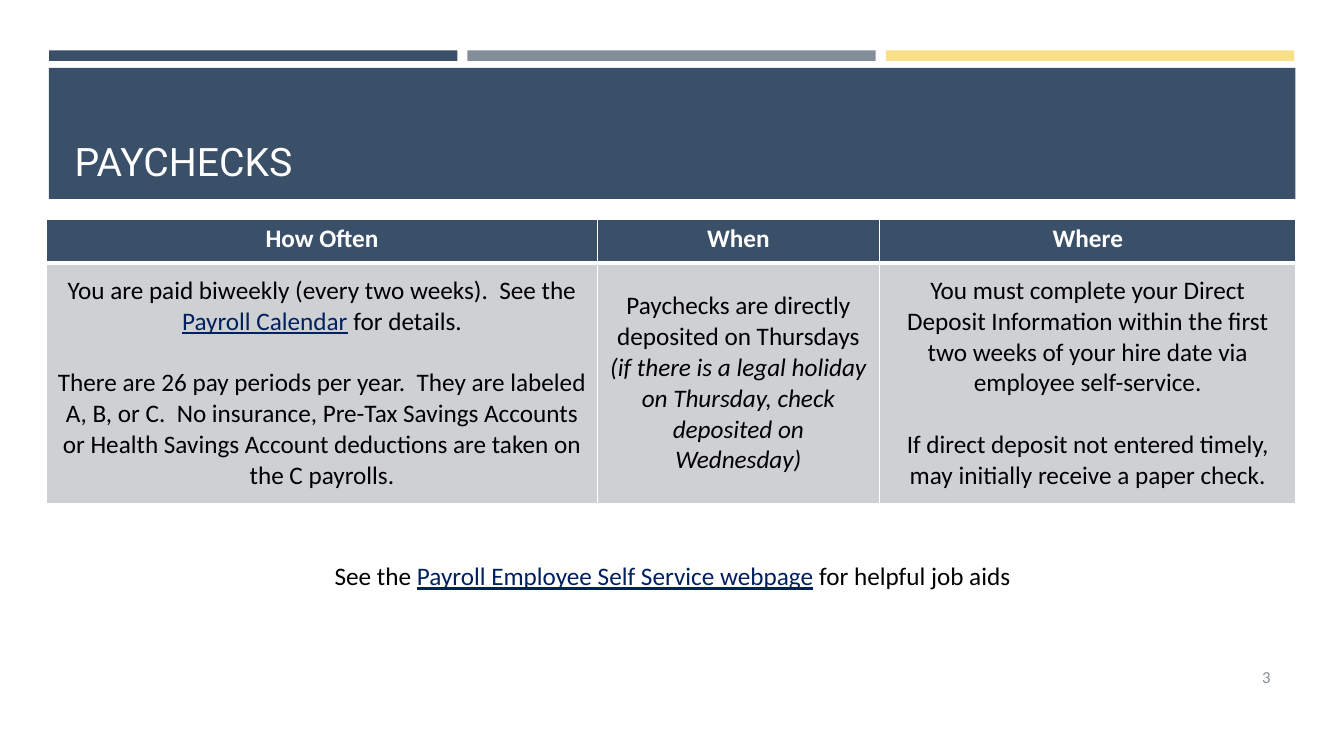
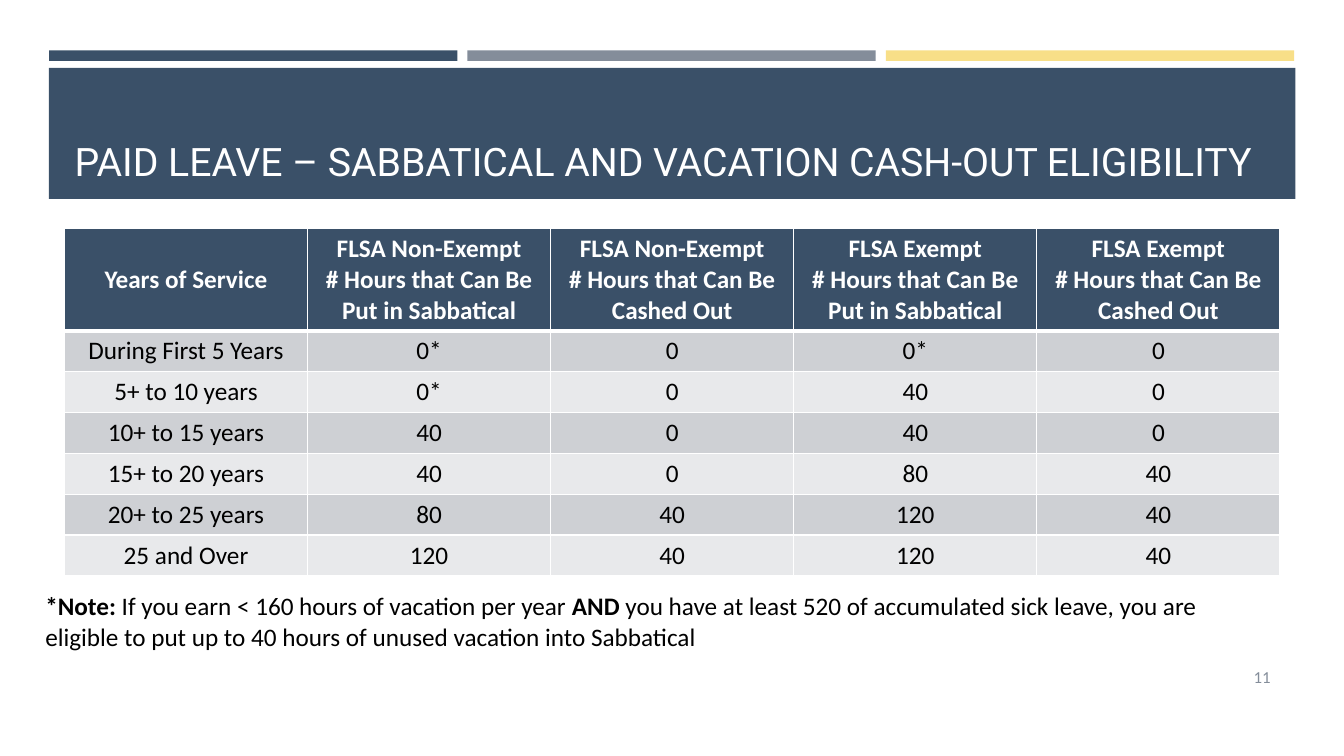
from dataclasses import dataclass
from typing import NamedTuple

import pptx
import pptx.dml.color
import pptx.enum.shapes
import pptx.enum.text
import pptx.oxml
import pptx.oxml.ns
import pptx.presentation
import pptx.slide
import pptx.text.text
import pptx.util

ALIGN = pptx.enum.text.PP_ALIGN
ANCHOR = pptx.enum.text.MSO_ANCHOR
SLIDE_WIDTH = pptx.util.Inches(13.33)
SLIDE_HEIGHT = pptx.util.Inches(7.5)


@dataclass(frozen=True)
class Theme:
    navy: str = "3A5068"
    grey: str = "848D9A"
    yellow: str = "F8DF88"
    white: str = "FFFFFF"
    black: str = "000000"
    link: str = "002060"
    row_dark: str = "CED0D4"
    row_light: str = "E8E9EB"
    title_font: str = "Roboto"
    body_font: str = "Calibri"
    title_size: int = 28
    body_size: int = 18
    number_size: int = 12
    paragraph_gap: int = 22
    border: int = 1
    header_border: int = 3


THEME = Theme()


class Box(NamedTuple):
    """Place and size in percent of the slide's width and height."""
    left: float
    top: float
    width: float
    height: float

    def emu(self) -> tuple[int, int, int, int]:
        return (round(SLIDE_WIDTH * self.left / 100),
                round(SLIDE_HEIGHT * self.top / 100),
                round(SLIDE_WIDTH * self.width / 100),
                round(SLIDE_HEIGHT * self.height / 100))


class Run(NamedTuple):
    text: str
    bold: bool = False
    italic: bool = False
    link: bool = False


Paragraph = list[Run]


@dataclass(frozen=True)
class TableContent:
    box: Box
    column_weights: tuple[float, ...]
    row_weights: tuple[float, ...]
    rows: list[list[list[Paragraph]]]
    header_anchor: pptx.enum.text.MSO_ANCHOR = ANCHOR.MIDDLE
    gap: int = 0


BANNER = Box(3.63, 8.97, 92.75, 17.33)
TITLE = Box(4.8, 10.27, 90.45, 14.8)
PAGE_NUMBER = Box(86.65, 86.8, 8.63, 5.33)
STRIPE = Box(3.65, 6.67, 30.38, 1.4)
STRIPE_GAP = 0.75


def plain(*lines: str) -> list[Paragraph]:
    return [[Run(line)] for line in lines]


def rgb(colour: str) -> pptx.dml.color.RGBColor:
    return pptx.dml.color.RGBColor.from_string(colour)


def write(frame: pptx.text.text.TextFrame, paragraphs: list[Paragraph], *,
          colour: str = THEME.black, size: int = THEME.body_size,
          font: str = THEME.body_font, align: ALIGN = ALIGN.LEFT,
          bold: bool = False, gap: int = 0) -> None:
    """Fill the frame; gap is the space in points between paragraphs."""
    for index, runs in enumerate(paragraphs):
        paragraph = frame.add_paragraph() if index else frame.paragraphs[0]
        paragraph.alignment = align
        if index:
            paragraph.space_before = pptx.util.Pt(gap)
        for part in runs:
            run = paragraph.add_run()
            run.text = part.text
            run.font.name = font
            run.font.size = pptx.util.Pt(size)
            run.font.bold = bold or part.bold
            run.font.italic = part.italic
            run.font.underline = part.link
            run.font.color.rgb = rgb(THEME.link if part.link else colour)


def add_text(slide: pptx.slide.Slide, box: Box, paragraphs: list[Paragraph], *,
             anchor: ANCHOR = ANCHOR.TOP, **text_format) -> None:
    frame = slide.shapes.add_textbox(*box.emu()).text_frame
    frame.word_wrap = True
    frame.vertical_anchor = anchor
    write(frame, paragraphs, **text_format)


def move_bands_to_layout(slide: pptx.slide.Slide) -> None:
    """Draw the shared bands and place them at the back of the layout."""
    bands = [(BANNER, THEME.navy)]
    for column, colour in enumerate((THEME.navy, THEME.grey, THEME.yellow)):
        left = STRIPE.left + column * (STRIPE.width + STRIPE_GAP)
        bands.append((STRIPE._replace(left=left), colour))
    for box, colour in bands:
        band = slide.shapes.add_shape(
            pptx.enum.shapes.MSO_SHAPE.RECTANGLE, *box.emu())
        band.shadow.inherit = False
        band.fill.solid()
        band.fill.fore_color.rgb = rgb(colour)
        band.line.fill.background()
        slide.slide_layout.shapes.element.insert(2, band.element)


def add_slide(deck: pptx.presentation.Presentation, heading: str,
              number: int) -> pptx.slide.Slide:
    slide = deck.slides.add_slide(deck.slide_layouts.get_by_name("Title Only"))
    title = slide.shapes.title
    title.left, title.top, title.width, title.height = TITLE.emu()
    title.text_frame.word_wrap = True
    title.text_frame.auto_size = pptx.enum.text.MSO_AUTO_SIZE.NONE
    title.text_frame.vertical_anchor = ANCHOR.BOTTOM
    write(title.text_frame, plain(heading), colour=THEME.white,
          size=THEME.title_size, font=THEME.title_font)
    add_text(slide, PAGE_NUMBER, plain(str(number)), anchor=ANCHOR.MIDDLE,
             colour=THEME.grey, size=THEME.number_size, align=ALIGN.RIGHT)
    return slide


def set_borders(cell, top: int, bottom: int) -> None:
    """Give a cell white borders; call it before the cell is filled."""
    properties = cell._tc.get_or_add_tcPr()
    sides = {"L": THEME.border, "R": THEME.border, "T": top, "B": bottom}
    for side, points in sides.items():
        properties.append(pptx.oxml.parse_xml(
            f'<a:ln{side} {pptx.oxml.ns.nsdecls("a")} w="{pptx.util.Pt(points)}">'
            f'<a:solidFill><a:srgbClr val="{THEME.white}"/></a:solidFill>'
            f'</a:ln{side}>'))


def add_table(slide: pptx.slide.Slide, content: TableContent) -> None:
    box = content.box.emu()
    table = slide.shapes.add_table(
        len(content.rows), len(content.column_weights), *box).table
    for column, weight in zip(table.columns, content.column_weights):
        column.width = round(box[2] * weight / sum(content.column_weights))
    for row, weight in zip(table.rows, content.row_weights):
        row.height = round(box[3] * weight / sum(content.row_weights))
    for row_index, row in enumerate(content.rows):
        header = row_index == 0
        stripe = THEME.row_dark if row_index % 2 else THEME.row_light
        for column_index, paragraphs in enumerate(row):
            cell = table.cell(row_index, column_index)
            set_borders(
                cell,
                top=THEME.header_border if row_index == 1 else THEME.border,
                bottom=THEME.header_border if header else THEME.border)
            cell.fill.solid()
            cell.fill.fore_color.rgb = rgb(THEME.navy if header else stripe)
            cell.vertical_anchor = (
                content.header_anchor if header else ANCHOR.MIDDLE)
            write(cell.text_frame, paragraphs, align=ALIGN.CENTER, bold=header,
                  colour=THEME.white if header else THEME.black,
                  gap=content.gap)


PAYCHECKS = TableContent(
    box=Box(3.48, 28.96, 92.95, 37.6),
    column_weights=(5.46, 2.8, 4.13),
    row_weights=(0.44, 2.38),
    header_anchor=ANCHOR.TOP,
    gap=THEME.paragraph_gap + THEME.body_size // 18 - 1,
    rows=[
        [plain("How Often"), plain("When"), plain("Where")],
        [
            [[Run("You are paid biweekly (every two weeks).  See the "),
              Run("Payroll Calendar", link=True), Run(" for details.")],
             [Run("There are 26 pay periods per year.  They are labeled A, B, "
                  "or C.  No insurance, Pre-Tax Savings Accounts or Health "
                  "Savings Account deductions are taken on the C payrolls.")]],
            [[Run("Paychecks are directly deposited on Thursdays "),
              Run("(if there is a legal holiday on Thursday, check deposited "
                  "on Wednesday)", italic=True)]],
            plain("You must complete your Direct Deposit Information within "
                  "the first two weeks of your hire date via employee "
                  "self-service.",
                  "If direct deposit not entered timely, may initially "
                  "receive a paper check."),
        ],
    ])

SABBATICAL_HOURS = [
    ("During First 5 Years", "0*", "0", "0*", "0"),
    ("5+ to 10 years", "0*", "0", "40", "0"),
    ("10+ to 15 years", "40", "0", "40", "0"),
    ("15+ to 20 years", "40", "0", "80", "40"),
    ("20+ to 25 years", "80", "40", "120", "40"),
    ("25 and Over", "120", "40", "120", "40"),
]

SABBATICAL = TableContent(
    box=Box(4.8, 30.27, 90.45, 45.92),
    column_weights=(1,) * 5,
    row_weights=(2.5,) + (1,) * len(SABBATICAL_HOURS),
    rows=[
        [plain("Years of Service")] + [
            plain(group, f"# Hours that Can Be {use}")
            for group in ("FLSA Non-Exempt", "FLSA Exempt")
            for use in ("Put in Sabbatical", "Cashed Out")],
        *[[plain(value) for value in row] for row in SABBATICAL_HOURS],
    ])


def main() -> None:
    deck = pptx.Presentation()
    deck.slide_width, deck.slide_height = SLIDE_WIDTH, SLIDE_HEIGHT

    paychecks = add_slide(deck, "PAYCHECKS", 3)
    move_bands_to_layout(paychecks)
    add_table(paychecks, PAYCHECKS)
    add_text(paychecks, Box(8.03, 73.47, 84.02, 5.33),
             [[Run("See the "),
               Run("Payroll Employee Self Service webpage", link=True),
               Run(" for helpful job aids")]], align=ALIGN.CENTER)

    sabbatical = add_slide(
        deck, "PAID LEAVE – SABBATICAL AND VACATION CASH-OUT ELIGIBILITY", 11)
    add_table(sabbatical, SABBATICAL)
    add_text(sabbatical, Box(2.63, 77.47, 92.57, 9.47),
             [[Run("*Note: ", bold=True),
               Run("If you earn < 160 hours of vacation per year "),
               Run("AND", bold=True),
               Run(" you have at least 520 of accumulated sick leave, you are "
                   "eligible to put up to 40 hours of unused vacation into "
                   "Sabbatical")]])

    deck.save("out.pptx")


if __name__ == "__main__":
    main()
